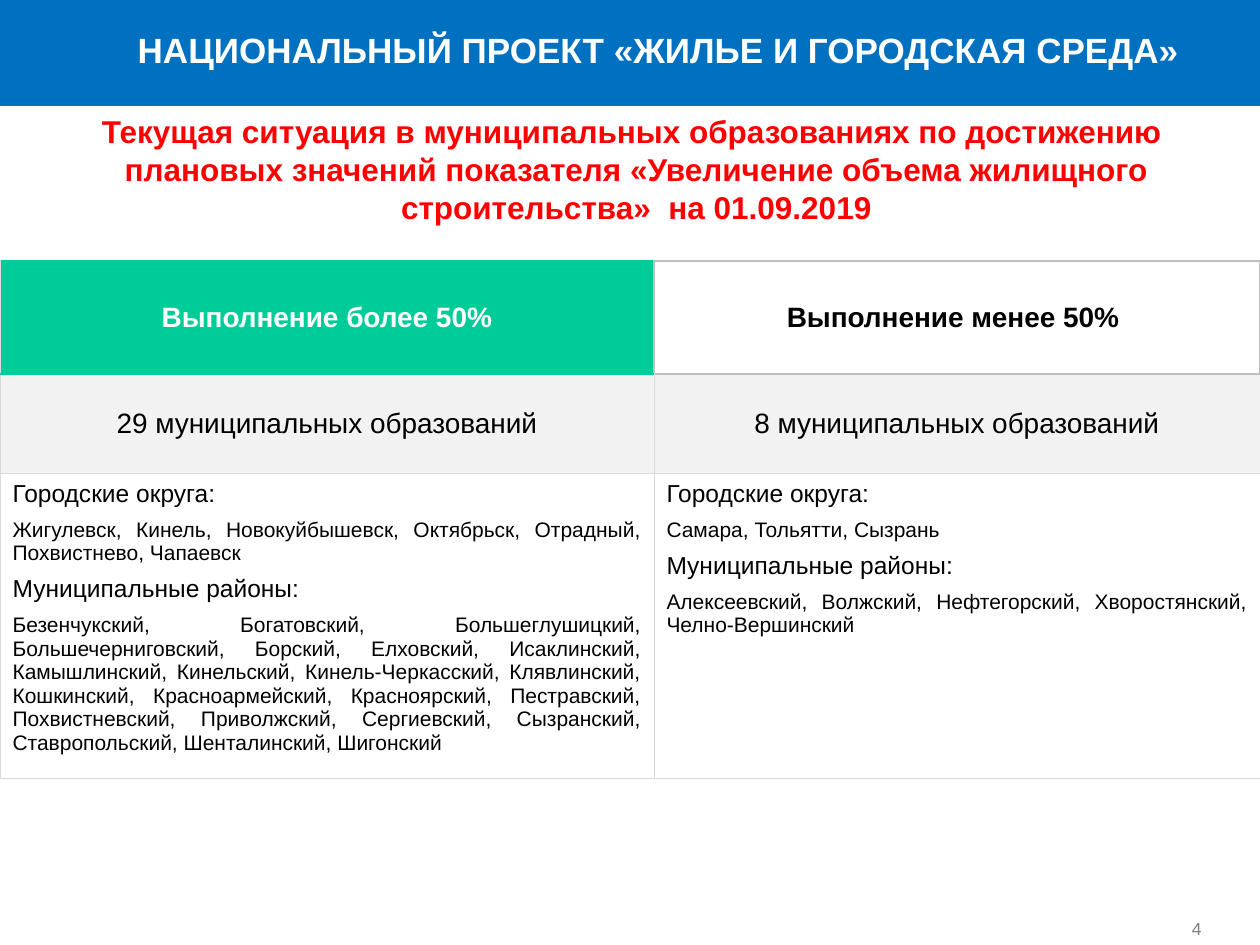
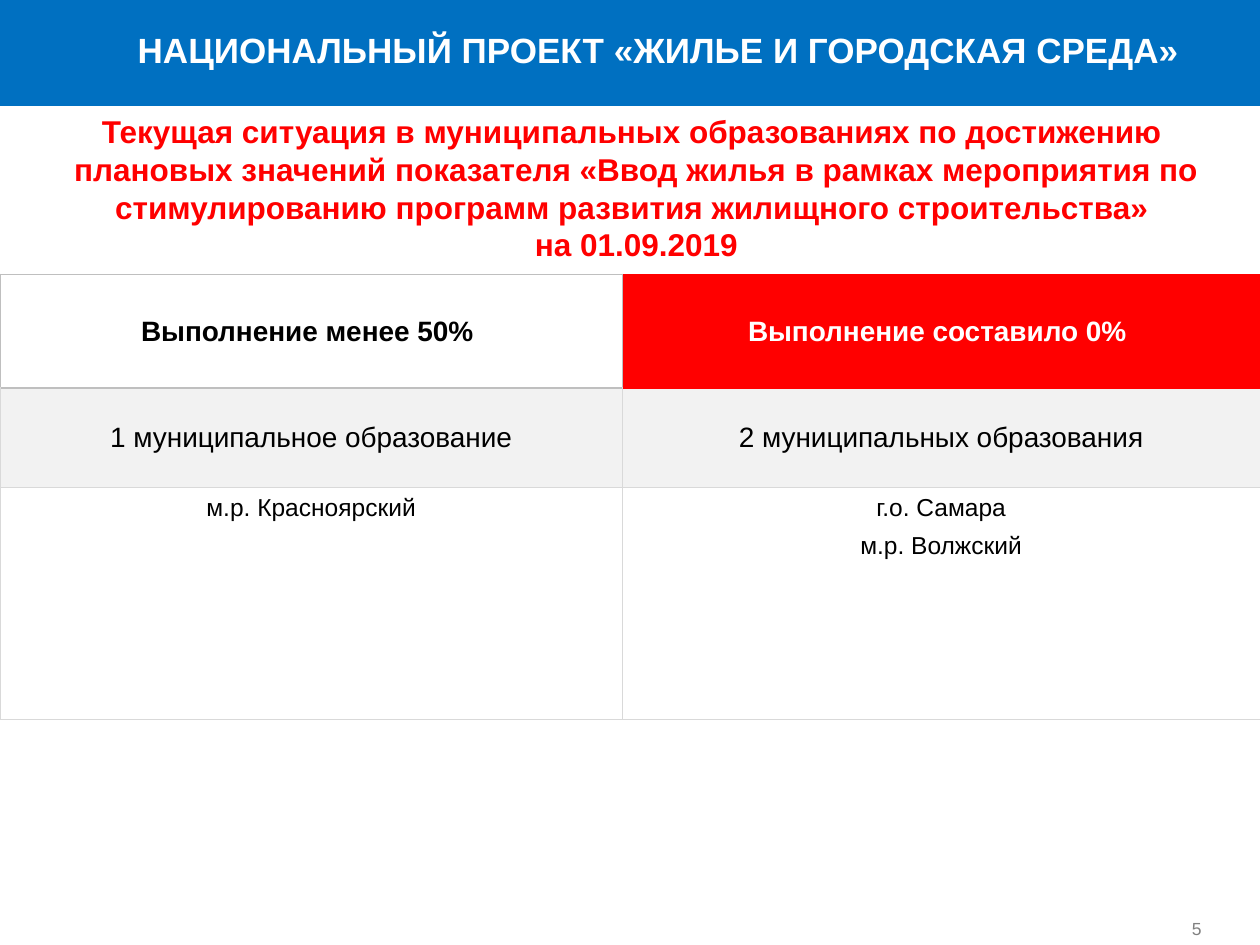
from dataclasses import dataclass

from lxml.etree import SubElement
from pptx import Presentation
from pptx.dml.color import RGBColor
from pptx.enum.shapes import MSO_SHAPE
from pptx.enum.text import MSO_ANCHOR, MSO_AUTO_SIZE, PP_ALIGN
from pptx.oxml.ns import qn
from pptx.util import Inches, Pt


@dataclass(frozen=True)
class Theme:
    font: str = "Arial"
    blue: str = "0070C1"
    green: str = "00CC99"
    red: str = "FF0000"
    white: str = "FFFFFF"
    black: str = "000000"
    gray: str = "808080"
    pale: str = "F2F2F2"
    hair: str = "D9D9D9"
    rule: str = "BFBFBF"
    title: int = 20
    lead: int = 18
    head: int = 16
    body: int = 14
    small: int = 12
    page: int = 10
    gap: int = 6


THEME = Theme()
WIDTH, HEIGHT, BAND = 10, 7.5, 0.84
TITLE = "НАЦИОНАЛЬНЫЙ ПРОЕКТ «ЖИЛЬЕ И ГОРОДСКАЯ СРЕДА»"
LEAD = "Текущая ситуация в муниципальных образованиях по достижению \vплановых значений показателя "


class Deck:
    def __init__(self, theme):
        self.theme = theme
        self.prs = Presentation()
        self.prs.slide_width = Inches(WIDTH)
        self.prs.slide_height = Inches(HEIGHT)
        self.slide = None

    def page(self, number, lead, depth):
        """Start a slide with its band, title, lead text and page number."""
        t = self.theme
        self.slide = self.prs.slides.add_slide(self.prs.slide_layouts[6])
        self.band()
        self.text((9.41, 7.1, 0.56, 0.4), str(number), t.page, t.gray, bold=False,
                  align=PP_ALIGN.LEFT, anchor=MSO_ANCHOR.BOTTOM, inset=0.05, wrap=False)
        self.text((1.01, 0.18, 8.43, 0.44), TITLE, t.title, t.white, inset=0.05, wrap=False)
        self.text((0.1, BAND, 9.9, depth), LEAD + lead, t.lead, t.red)

    def band(self):
        shape = self.slide.shapes.add_shape(MSO_SHAPE.RECTANGLE, 0, 0, Inches(WIDTH), Inches(BAND))
        shape.shadow.inherit = False
        shape.fill.solid()
        shape.fill.fore_color.rgb = RGBColor.from_string(self.theme.blue)
        shape.line.fill.background()

    def text(self, place, words, size, color, bold=True, align=PP_ALIGN.CENTER,
             anchor=MSO_ANCHOR.TOP, inset=0.1, wrap=True):
        box = self.slide.shapes.add_textbox(*map(Inches, place))
        frame = box.text_frame
        frame.word_wrap = wrap
        frame.auto_size = MSO_AUTO_SIZE.SHAPE_TO_FIT_TEXT
        frame.vertical_anchor = anchor
        frame.margin_left = frame.margin_right = Inches(inset)
        frame.margin_top = frame.margin_bottom = Inches(0.05)
        frame.text = words
        for para in frame.paragraphs:
            self.style(para, size, color, bold, align)

    def style(self, para, size, color, bold, align):
        para.alignment = align
        for run in para.runs:
            run.font.name = self.theme.font
            run.font.size = Pt(size)
            run.font.bold = bold
            run.font.color.rgb = RGBColor.from_string(color)

    def table(self, top, widths, heights, columns):
        """Draw columns given as (head, head fill, count, list align, list lines)."""
        t = self.theme
        hair, rule = (t.hair, 0.5), (t.rule, 1)
        frame = self.slide.shapes.add_table(
            len(heights), len(widths), 0, Inches(top), Inches(WIDTH), Inches(sum(heights)))
        grid = frame.table
        grid.first_row = grid.horz_banding = False
        for row, height in zip(grid.rows, heights):
            row.height = Inches(height)
        for col, (head, fill, count, align, lines) in enumerate(columns):
            grid.columns[col].width = Inches(widths[col])
            plain = fill == t.white
            edge = rule if plain else (fill, 1)
            sides = [rule, rule]
            if not plain:
                sides[col] = hair
            cells = [grid.cell(row, col) for row in range(len(heights))]
            self.cell(cells[0], fill, (*sides, edge, edge))
            self.cell(cells[1], t.pale, (hair, hair, edge, hair))
            self.cell(cells[2], t.white, (hair,) * 4)
            ink = t.black if plain else t.white
            for cell, words, color, bold in ((cells[0], head, ink, True),
                                             (cells[1], count, t.black, False)):
                cell.vertical_anchor = MSO_ANCHOR.MIDDLE
                cell.text_frame.text = words
                self.style(cell.text_frame.paragraphs[0], t.head, color, bold, PP_ALIGN.CENTER)
            self.items(cells[2].text_frame, lines, align)

    def items(self, frame, lines, align):
        """Write (words, size) lines with an even gap after each."""
        frame.text = "\n".join(words for words, _ in lines)
        for para, (_, size) in zip(frame.paragraphs, lines):
            para.space_after = Pt(self.theme.gap)
            self.style(para, size, self.theme.black, False, align)

    def cell(self, cell, fill, edges):
        """Set the fill and the left, right, top and bottom edges."""
        props = cell._tc.get_or_add_tcPr()
        for side, (color, width) in zip("LRTB", edges):
            line = SubElement(props, qn(f"a:ln{side}"), w=str(Pt(width)))
            solid = SubElement(line, qn("a:solidFill"))
            SubElement(solid, qn("a:srgbClr"), val=color)
        cell.fill.solid()
        cell.fill.fore_color.rgb = RGBColor.from_string(fill)


def places(towns, areas):
    """Pair the town and district lists with their headings."""
    t = THEME
    return [("Городские округа:", t.body), (towns, t.small),
            ("Муниципальные районы:", t.body), (areas, t.small)]


def main():
    t = THEME
    deck = Deck(t)

    deck.page(4, "«Увеличение объема жилищного строительства»  на 01.09.2019", 1.01)
    done = places(
        "Жигулевск, Кинель, Новокуйбышевск, Октябрьск, Отрадный, Похвистнево, Чапаевск",
        "Безенчукский, Богатовский, Большеглушицкий, Большечерниговский, Борский, "
        "Елховский, Исаклинский, Камышлинский, Кинельский, Кинель-Черкасский, "
        "Клявлинский, Кошкинский, Красноармейский, Красноярский, Пестравский, "
        "Похвистневский, Приволжский, Сергиевский, Сызранский, Ставропольский, "
        "Шенталинский, Шигонский")
    late = places(
        "Самара, Тольятти, Сызрань",
        "Алексеевский, Волжский, Нефтегорский, Хворостянский, Челно-Вершинский")
    deck.table(2.07, (5.19, 4.81), (0.9, 0.79, 2.41), (
        ("Выполнение более 50%", t.green, "29 муниципальных образований", PP_ALIGN.JUSTIFY, done),
        ("Выполнение менее 50% ", t.white, "8 муниципальных образований", PP_ALIGN.JUSTIFY, late)))

    deck.page(5, "«Ввод жилья в рамках мероприятия по стимулированию программ "
                 "развития жилищного строительства» \nна 01.09.2019", 1.31)
    deck.table(2.18, (4.94, 5.06), (0.9, 0.79, 1.84), (
        ("Выполнение менее 50% ", t.white, "1 муниципальное образование", PP_ALIGN.CENTER,
         [("м.р. Красноярский", t.body)]),
        ("Выполнение составило 0% ", t.red, "2 муниципальных образования", PP_ALIGN.CENTER,
         [("г.о. Самара", t.body), ("м.р. Волжский", t.body)])))

    deck.prs.save("out.pptx")


if __name__ == "__main__":
    main()
